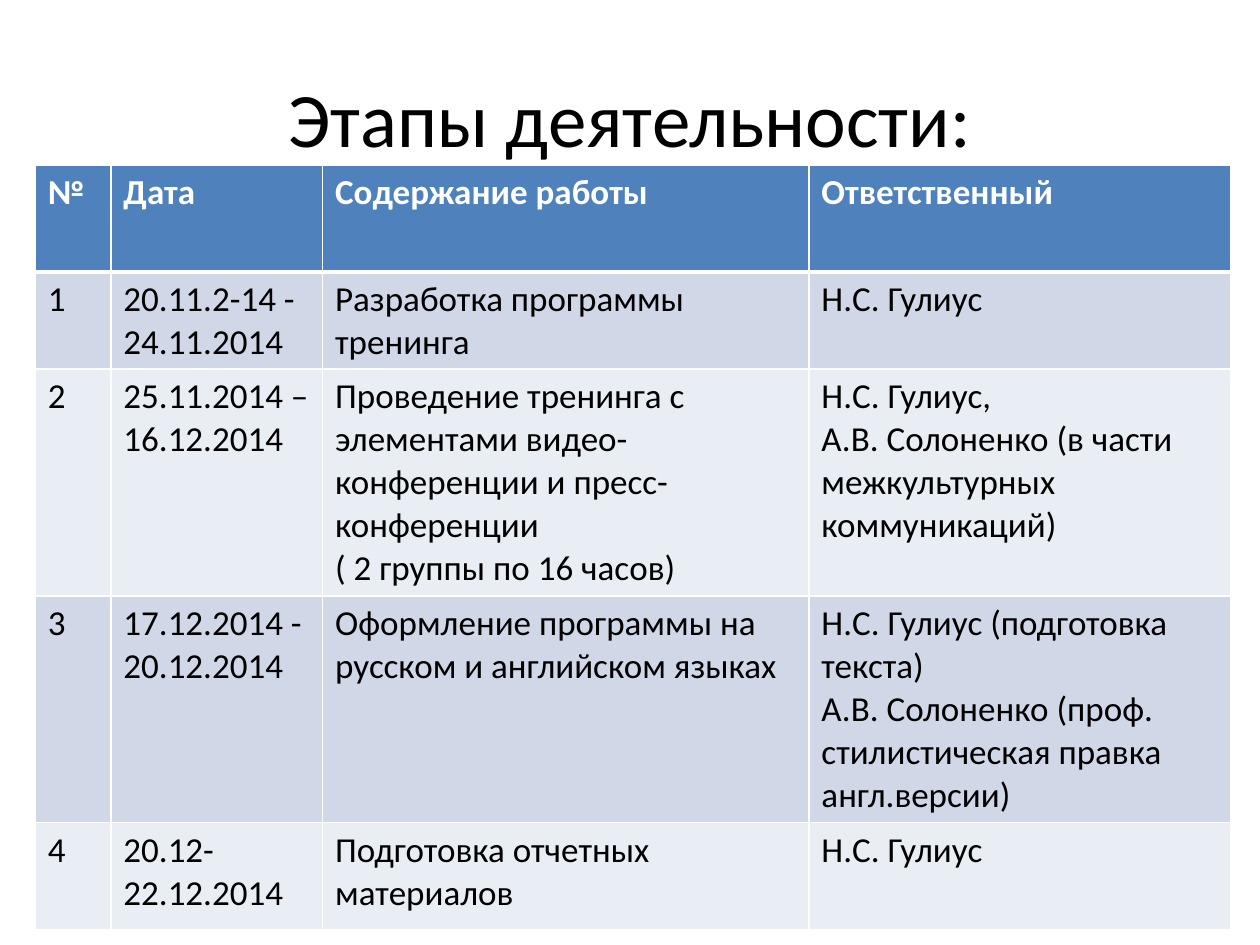
from pptx import Presentation
from pptx.dml.color import RGBColor
from pptx.enum.text import MSO_ANCHOR, PP_ALIGN
from pptx.oxml.ns import qn
from pptx.util import Inches, Pt
from lxml import etree

MIDDLE = MSO_ANCHOR.MIDDLE
LEFT, CENTER = PP_ALIGN.LEFT, PP_ALIGN.CENTER

FONT = "Calibri"
COLORS = {
    "text": "000000",
    "white": "FFFFFF",
    "header": "4F81BD",
    "odd": "D0D8E8",
    "even": "E9EDF4",
}

COL_WIDTHS = [0.6, 1.68, 3.86, 3.35]
ROW_HEIGHTS = [0.85, 0.77, 1.8, 1.8, 0.85]
STAGES = [
    ["№", "Дата", "Содержание работы", "Ответственный"],
    ["1", "20.11.2-14 - 24.11.2014", "Разработка программы тренинга", "Н.С. Гулиус"],
    ["2", "25.11.2014 – 16.12.2014",
     "Проведение тренинга с элементами видео-конференции и пресс-конференции\n"
     "( 2 группы по 16 часов)",
     "Н.С. Гулиус,\nА.В. Солоненко (в части межкультурных коммуникаций)"],
    ["3", "17.12.2014 - 20.12.2014",
     "Оформление программы на русском и английском языках",
     "Н.С. Гулиус (подготовка текста)\n"
     "А.В. Солоненко (проф. стилистическая правка англ.версии)"],
    ["4", "20.12-22.12.2014", "Подготовка отчетных материалов", "Н.С. Гулиус"],
]


def rgb(name):
    return RGBColor.from_string(COLORS[name])


def write_text(tf, text, size=20, color="text", bold=False, align=LEFT):
    """Write each line of text as a paragraph."""
    tf.word_wrap = True
    for i, line in enumerate(text.split("\n")):
        p = tf.paragraphs[0] if i == 0 else tf.add_paragraph()
        p.alignment = align
        r = p.add_run()
        r.text = line
        r.font.name = FONT
        r.font.size = Pt(size)
        r.font.bold = bold
        r.font.color.rgb = rgb(color)


def set_borders(cell, color, **widths):
    """Set border widths in points by side: L, R, T, B."""
    tc_pr = cell._tc.get_or_add_tcPr()
    for i, (side, width) in enumerate(widths.items()):
        ln = etree.Element(qn(f"a:ln{side}"), w=str(Pt(width)))
        fill = etree.SubElement(ln, qn("a:solidFill"))
        etree.SubElement(fill, qn("a:srgbClr"), val=COLORS[color])
        tc_pr.insert(i, ln)


def add_title(s, x, y, w, h):
    tb = s.shapes.add_textbox(Inches(x), Inches(y), Inches(w), Inches(h))
    tf = tb.text_frame
    tf.vertical_anchor = MIDDLE
    write_text(tf, "Этапы деятельности:", size=44, align=CENTER)


def add_stages_table(s, x, y, w, h):
    table = s.shapes.add_table(len(STAGES), len(COL_WIDTHS), Inches(x), Inches(y),
                               Inches(w), Inches(h)).table
    for col, width in zip(table.columns, COL_WIDTHS):
        col.width = Inches(width)
    for i, (row, height) in enumerate(zip(table.rows, ROW_HEIGHTS)):
        row.height = Inches(height)
        header = i == 0
        fill = "header" if header else "odd" if i % 2 else "even"
        for cell, text in zip(row.cells, STAGES[i]):
            write_text(cell.text_frame, text, bold=header,
                       color="white" if header else "text")
            cell.fill.solid()
            cell.fill.fore_color.rgb = rgb(fill)
            set_borders(cell, "white", L=1, R=1, T=3 if i == 1 else 1,
                        B=3 if header else 1)


def main():
    prs = Presentation()
    prs.slide_width, prs.slide_height = Inches(10), Inches(7.5)
    s = prs.slides.add_slide(prs.slide_layouts[6])
    add_title(s, 0.5, 0.3, 9, 1.25)
    add_stages_table(s, 0.28, 1.31, sum(COL_WIDTHS), sum(ROW_HEIGHTS))
    prs.save("out.pptx")


if __name__ == "__main__":
    main()
